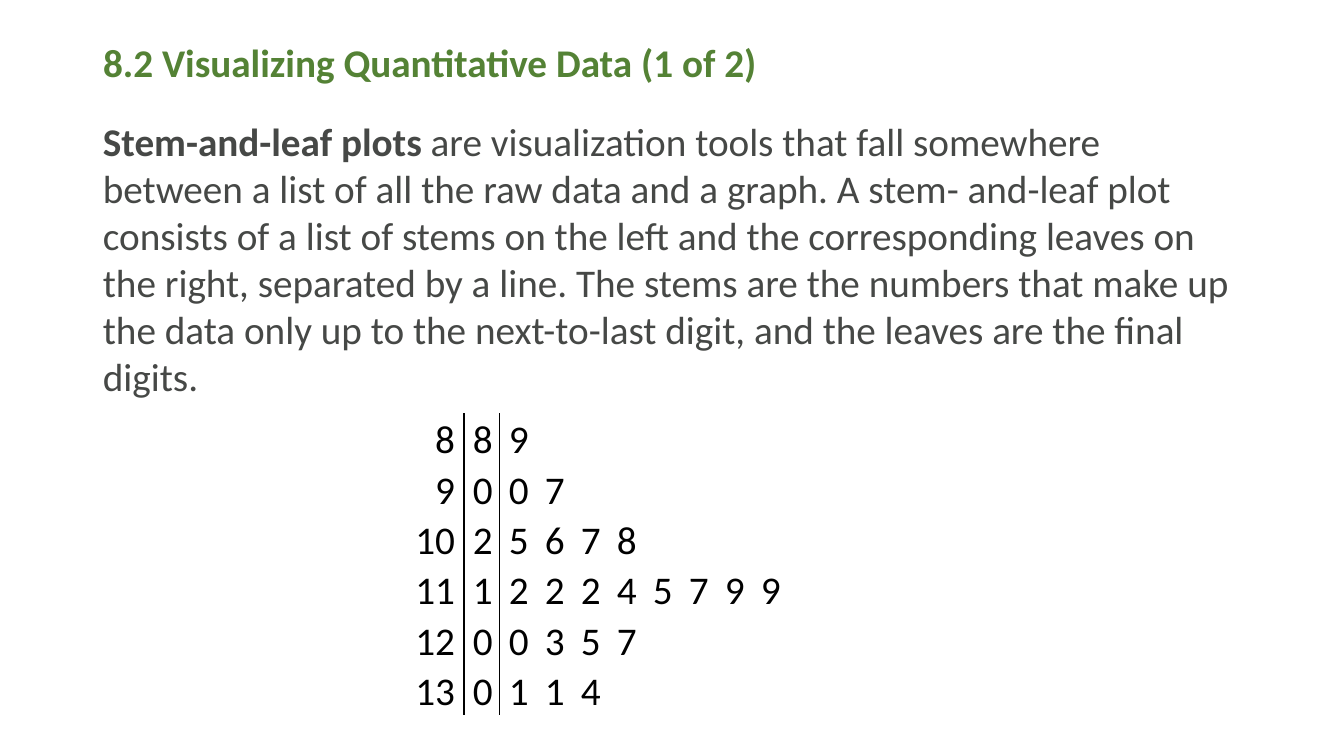
"""Build a slide that explains stem-and-leaf plots with an example."""
from lxml import etree
from pptx import Presentation
from pptx import util as u
from pptx.dml.color import RGBColor
from pptx.enum import text
from pptx.oxml import ns

PX = 914400 / 100.8
FONT_SIZE = 28
GREEN, GRAY, BLACK = "548235", "464846", "000000"
STEM_WIDTH, LEAF_WIDTH, ROW_HEIGHT, CELL_INSET = 131, 36, 41, 9
TERM = "Stem-and-leaf plots "
DEFINITION = (
    "are visualization tools that fall somewhere between a list of all the raw "
    "data and a graph. A stem- and-leaf plot consists of a list of stems on the "
    "left and the corresponding leaves on the right, separated by a line. The "
    "stems are the numbers that make up the data only up to the next-to-last "
    "digit, and the leaves are the final digits."
)
LEAVES_BY_STEM = {
    "8": "89",
    "9": "007",
    "10": "25678",
    "11": "122245799",
    "12": "00357",
    "13": "0114",
}


def px(length):
    """Turn pixels into EMU."""
    return u.Emu(round(length * PX))


def color(hex_code):
    """Turn a hex string into a color."""
    return RGBColor.from_string(hex_code)


def format_font(font, hex_code, bold=False):
    """Apply the slide's font with a color and weight."""
    font.name = "Calibri"
    font.size = u.Pt(FONT_SIZE)
    font.bold = bold
    font.color.rgb = color(hex_code)


def set_title(slide, wording, left, top, width, height):
    """Place and format the slide title."""
    title = slide.shapes.title
    title.left, title.top = px(left), px(top)
    title.width, title.height = px(width), px(height)
    frame = title.text_frame
    frame.text = wording
    frame.auto_size = text.MSO_AUTO_SIZE.NONE
    frame.vertical_anchor = text.MSO_ANCHOR.MIDDLE
    heading = frame.paragraphs[0]
    heading.alignment = text.PP_ALIGN.LEFT
    heading.line_spacing = 0.9
    format_font(heading.runs[0].font, GREEN, bold=True)


def add_definition(slide, term, explanation, left, top, width, height):
    """Add a paragraph that opens with a bold term."""
    frame = slide.shapes.add_textbox(px(left), px(top), px(width), px(height)).text_frame
    frame.word_wrap = True
    paragraph = frame.paragraphs[0]
    paragraph.space_after = u.Pt(6)
    for wording, bold in ((term, True), (explanation, False)):
        run = paragraph.add_run()
        run.text = wording
        format_font(run.font, GRAY, bold)


def add_border(cell, side, points):
    """Draw a solid border on one side of a cell, ahead of its fill."""
    properties = cell._tc.get_or_add_tcPr()
    line = etree.Element(ns.qn(f"a:ln{side}"), w=str(u.Pt(points)))
    fill = etree.SubElement(line, ns.qn("a:solidFill"))
    etree.SubElement(fill, ns.qn("a:srgbClr"), val=BLACK)
    borders = [part for part in properties if etree.QName(part).localname.startswith("ln")]
    properties.insert(len(borders), line)


def fill_cell(cell, digits):
    """Write digits at the bottom right of a cell."""
    cell.fill.background()
    cell.margin_left = cell.margin_right = px(CELL_INSET)
    cell.margin_top = cell.margin_bottom = 0
    cell.vertical_anchor = text.MSO_ANCHOR.BOTTOM
    if digits:
        cell.text_frame.text = digits
        paragraph = cell.text_frame.paragraphs[0]
        paragraph.alignment = text.PP_ALIGN.RIGHT
        paragraph.line_spacing = 1.07
        paragraph.space_after = u.Pt(8)
        format_font(paragraph.runs[0].font, BLACK)


def add_stem_plot(slide, leaves_by_stem, left, top):
    """Add a table with stems on the left and one leaf per column."""
    leaf_count = max(map(len, leaves_by_stem.values()))
    row_count = len(leaves_by_stem)
    plot = slide.shapes.add_table(
        row_count, leaf_count + 1, px(left), px(top),
        px(STEM_WIDTH + leaf_count * LEAF_WIDTH), px(row_count * ROW_HEIGHT),
    ).table
    plot.first_row = plot.horz_banding = False
    style = plot._tbl.tblPr.find(ns.qn("a:tableStyleId"))
    style.text = "{2D5ABB26-0587-4C30-8999-92F81FD0307C}"
    for index, column in enumerate(plot.columns):
        column.width = px(LEAF_WIDTH if index else STEM_WIDTH)
    for row, (stem, leaves) in zip(plot.rows, leaves_by_stem.items()):
        row.height = px(ROW_HEIGHT)
        for cell, digits in zip(row.cells, [stem, *leaves.ljust(leaf_count)]):
            fill_cell(cell, digits.strip())
        add_border(row.cells[0], "R", 1)
        add_border(row.cells[1], "L", 1)
        add_border(row.cells[1], "R", 0.75)


def main():
    """Build and save the slide."""
    deck = Presentation()
    deck.slide_width, deck.slide_height = px(1344), px(756)
    slide = deck.slides.add_slide(deck.slide_layouts.get_by_name("Title Only"))
    set_title(slide, "8.2 Visualizing Quantitative Data (1 of 2)", 93, 40, 988, 50)
    add_definition(slide, TERM, DEFINITION, 93, 112, 1159, 605)
    add_stem_plot(slide, LEAVES_BY_STEM, 333, 413)
    deck.save("out.pptx")


if __name__ == "__main__":
    main()
